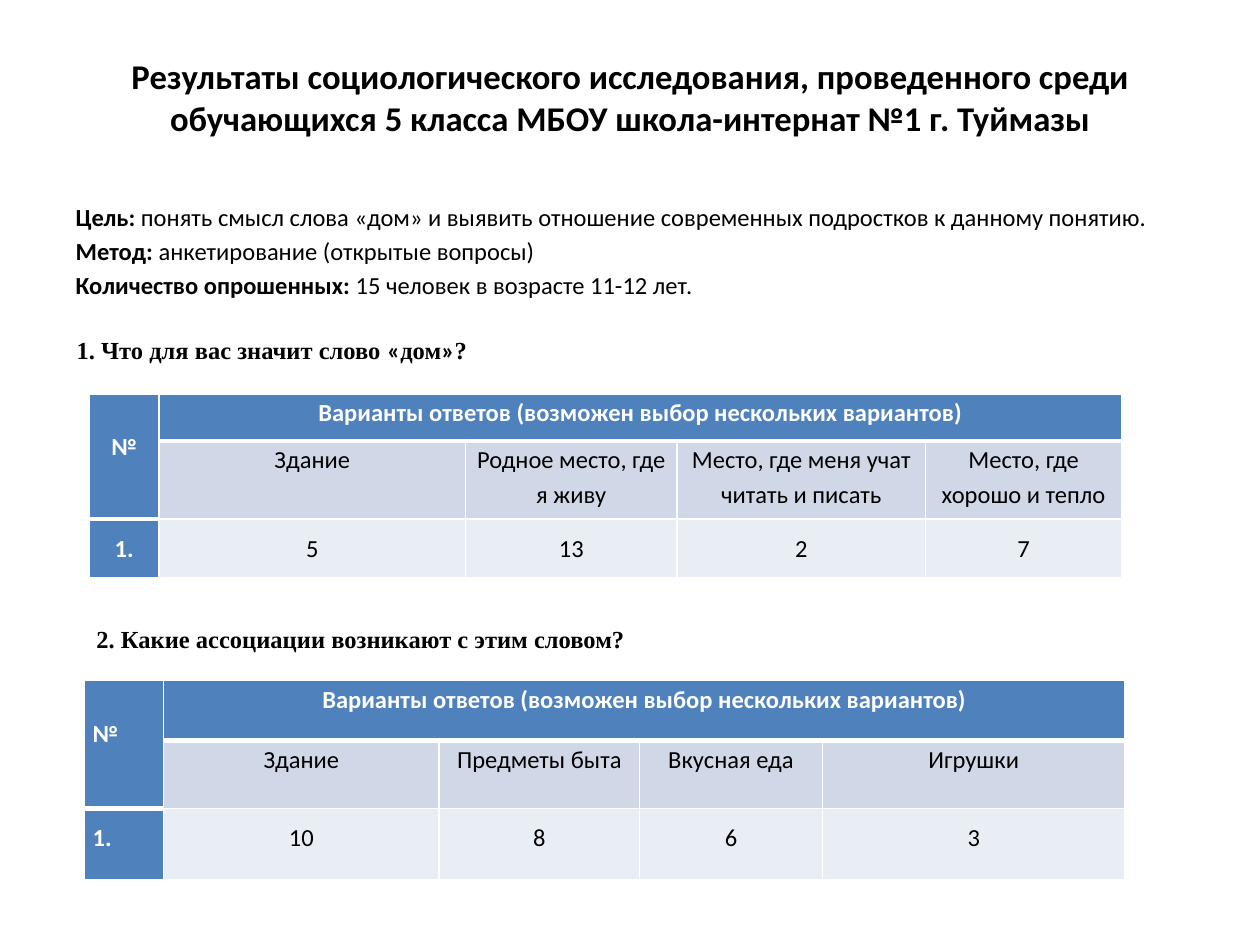
import pptx
import pptx.util
import pptx.dml.color
import pptx.enum.text
import pptx.oxml
import pptx.oxml.ns

Pt = pptx.util.Pt
RGBColor = pptx.dml.color.RGBColor
Align = pptx.enum.text.PP_ALIGN
Anchor = pptx.enum.text.MSO_ANCHOR
AutoSize = pptx.enum.text.MSO_AUTO_SIZE

BLACK = RGBColor(0x00, 0x00, 0x00)
WHITE = RGBColor(0xFF, 0xFF, 0xFF)
BLUE = RGBColor(0x4F, 0x81, 0xBD)
LIGHT = RGBColor(0xD0, 0xD8, 0xE8)
PALE = RGBColor(0xE9, 0xED, 0xF4)

SANS = "Calibri"
SERIF = "Times New Roman"
ANSWERS = "Варианты ответов (возможен выбор нескольких вариантов)"


class SurveySlide:
    """Holds the text style and the current page."""

    text_size = 14
    number_drop = 19.7  # puts the number sign on the second line of its cell

    def __init__(self, deck):
        self.page = deck.slides.add_slide(deck.slide_layouts[1])

    def style(self, font, name=SANS, size=text_size, color=BLACK, bold=False):
        font.name = name
        font.size = Pt(size)
        font.color.rgb = color
        font.bold = bold

    def place(self, box, left, top, width, height):
        box.left, box.top, box.width, box.height = map(Pt, (left, top, width, height))

    def title(self, text, *bounds):
        box = self.page.shapes.title
        self.place(box, *bounds)
        frame = box.text_frame
        frame.auto_size = AutoSize.NONE
        frame.vertical_anchor = Anchor.MIDDLE
        frame.text = text
        self.style(frame.paragraphs[0].font, size=19.8, bold=True)

    def body(self, lines, *bounds):
        box = self.page.placeholders[1]
        self.place(box, *bounds)
        frame = box.text_frame
        frame.auto_size = AutoSize.NONE
        for index, (label, text) in enumerate(lines):
            para = frame.paragraphs[0] if index == 0 else frame.add_paragraph()
            properties = para._p.get_or_add_pPr()
            properties.set("marL", "0")
            properties.set("indent", "0")
            properties.append(pptx.oxml.parse_xml(
                f"<a:buNone {pptx.oxml.ns.nsdecls('a')}/>"))
            para.space_before = Pt(2.8 if index else 0)
            self.style(para.font)
            span = para.add_run()
            span.text = label
            span.font.bold = True
            para.add_run().text = text

    def heading(self, spans, *bounds):
        box = self.page.shapes.add_textbox(*map(Pt, bounds))
        frame = box.text_frame
        frame.word_wrap = True
        frame.auto_size = AutoSize.SHAPE_TO_FIT_TEXT
        frame.vertical_anchor = Anchor.MIDDLE
        para = frame.paragraphs[0]
        self.style(para.font, name=SERIF, bold=True)
        for text, name in spans:
            span = para.add_run()
            span.text = text
            span.font.name = name

    def borders(self, cell, top, bottom):
        properties = cell._tc.get_or_add_tcPr()
        for side, width in (("L", 1), ("R", 1), ("T", top), ("B", bottom)):
            properties.append(pptx.oxml.parse_xml(
                f'<a:ln{side} {pptx.oxml.ns.nsdecls("a")} w="{Pt(width)}">'
                f'<a:solidFill><a:srgbClr val="{WHITE}"/></a:solidFill></a:ln{side}>'))

    def table(self, left, top, widths, heights, options, counts, number_align):
        frame = self.page.shapes.add_table(
            len(heights), len(widths), Pt(left), Pt(top),
            Pt(sum(widths)), Pt(sum(heights)))
        table = frame.table
        for column, width in zip(table.columns, widths):
            column.width = Pt(width)
        for row, height in zip(table.rows, heights):
            row.height = Pt(height)
        table.cell(0, 0).merge(table.cell(1, 0))
        table.cell(0, 1).merge(table.cell(0, len(widths) - 1))

        rows = [["№", ANSWERS], [""] + options, ["1."] + counts]
        for r in range(len(heights)):
            for c in range(len(widths)):
                cell = table.cell(r, c)
                is_header = r == 0 or c == 0
                # A heavy rule closes the header above the data
                self.borders(cell,
                             top=3 if r == 1 or (r, c) == (2, 0) else 1,
                             bottom=3 if r == 0 or (r, c) == (1, 0) else 1)
                cell.fill.solid()
                cell.fill.fore_color.rgb = BLUE if is_header else (LIGHT if r == 1 else PALE)
                cell.margin_left = cell.margin_right = Pt(5)
                cell.margin_top = Pt(self.number_drop if (r, c) == (0, 0) else 0)
                cell.margin_bottom = Pt(0)
                if cell.is_spanned:
                    continue
                cell.text = rows[r][c]
                para = cell.text_frame.paragraphs[0]
                para.alignment = number_align if c == 0 else Align.CENTER
                para.line_spacing = 1.5 if r == 2 else 1.15
                self.style(para.font, color=WHITE if is_header else BLACK, bold=is_header)


def main():
    deck = pptx.Presentation()
    deck.slide_width, deck.slide_height = Pt(720), Pt(540)
    survey = SurveySlide(deck)

    # Title and study description
    survey.title("Результаты социологического исследования, проведенного среди "
                 "обучающихся 5 класса МБОУ школа-интернат №1 г. Туймазы",
                 36, 21.6, 648, 67)
    survey.body([
        ("Цель: ", "понять смысл слова «дом» и выявить отношение "
                   "современных подростков к данному понятию."),
        ("Метод: ", "анкетирование (открытые вопросы)"),
        ("Количество опрошенных:", " 15 человек в возрасте 11-12 лет."),
    ], 36, 111.6, 648, 371)

    # First question
    survey.heading([("1. Что для вас значит слово ", SERIF), ("«", SANS),
                    ("дом", SERIF), ("»", SANS), ("?", SERIF)],
                   36.7, 187.5, 562, 24.5)
    survey.table(51, 225, [40, 175, 121, 142, 112], [27, 44.5, 33.5],
                 ["Здание", "Родное место, где я живу",
                  "Место, где меня учат читать и писать", "Место, где хорошо и тепло"],
                 ["5", "13", "2", "7"], Align.CENTER)

    # Second question
    survey.heading([("2. Какие ассоциации возникают с этим словом?", SERIF)],
                   48, 353, 600, 24.5)
    survey.table(48, 389, [45.5, 157.5, 114.5, 104.5, 173], [34, 38.5, 41],
                 ["Здание", "Предметы быта", "Вкусная еда", "Игрушки"],
                 ["10", "8", "6", "3"], Align.JUSTIFY)

    deck.save("out.pptx")


if __name__ == "__main__":
    main()
